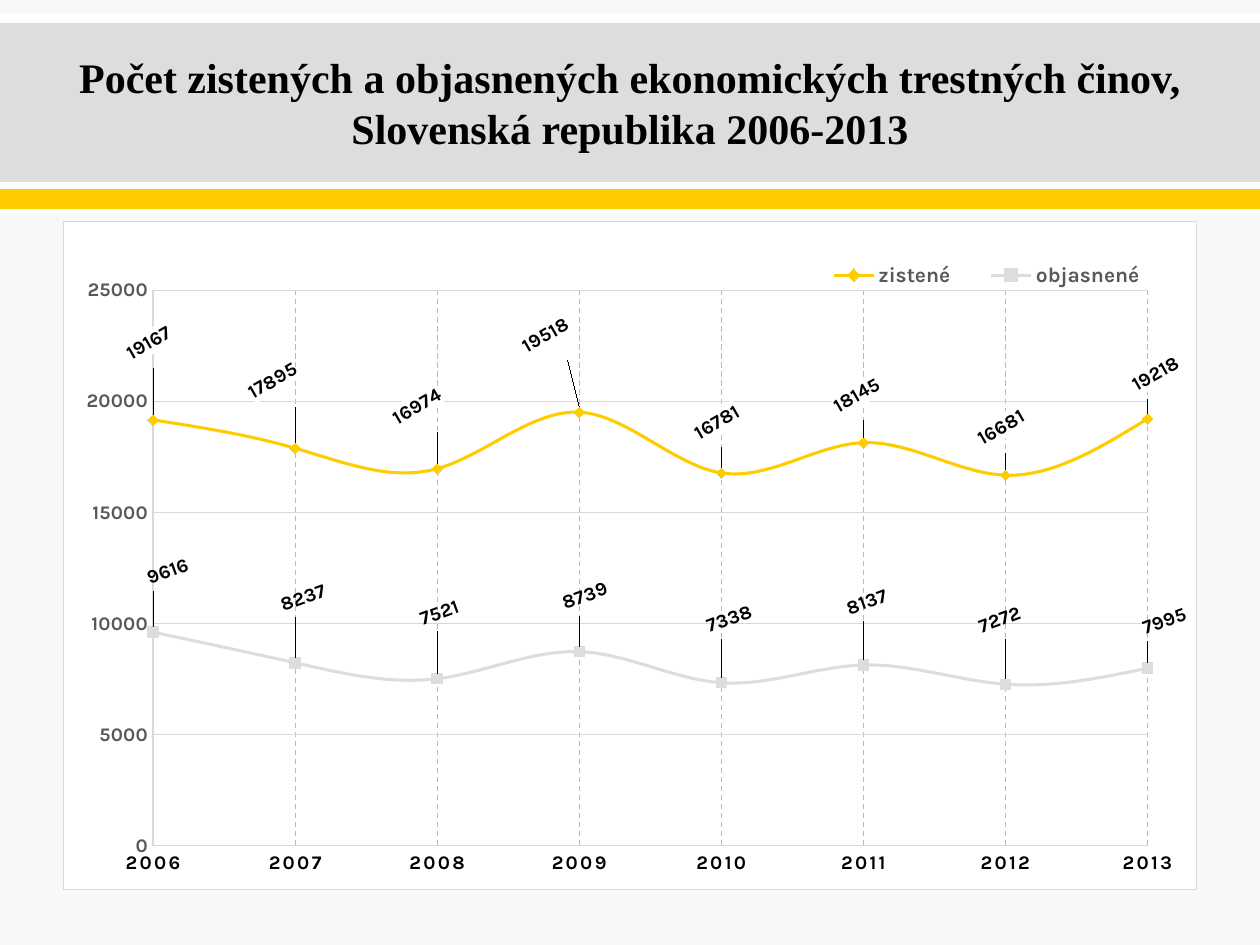
from dataclasses import dataclass

from lxml.etree import SubElement
from pptx import Presentation
from pptx.chart.data import CategoryChartData
from pptx.dml.color import RGBColor
from pptx.enum.chart import XL_CHART_TYPE as ChartType
from pptx.enum.chart import XL_LABEL_POSITION as LabelPosition
from pptx.enum.chart import XL_LEGEND_POSITION as LegendPosition
from pptx.enum.chart import XL_MARKER_STYLE as MarkerStyle
from pptx.enum.chart import XL_TICK_MARK as TickMark
from pptx.enum.dml import MSO_LINE_DASH_STYLE as DashStyle
from pptx.enum.shapes import MSO_SHAPE as ShapeType
from pptx.enum.text import MSO_ANCHOR as Anchor
from pptx.enum.text import MSO_AUTO_SIZE as AutoSize
from pptx.enum.text import PP_ALIGN as Align
from pptx.oxml import parse_xml
from pptx.oxml.ns import nsdecls, qn
from pptx.util import Emu, Pt

PX = 914400 // 126
BACKGROUND = RGBColor(0xF8, 0xF8, 0xF8)
WHITE = RGBColor(0xFF, 0xFF, 0xFF)
BLACK = RGBColor(0, 0, 0)
SILVER = RGBColor(0xDD, 0xDD, 0xDD)
YELLOW = RGBColor(0xFF, 0xCC, 0)
GRAY = RGBColor(0x59, 0x59, 0x59)
RULE = RGBColor(0xD9, 0xD9, 0xD9)
DASH = RGBColor(0xBA, 0xBA, 0xBA)
CHART_FONT = "Karla"
CHART_WIDTH, CHART_HEIGHT = 1134, 669


@dataclass
class Band:
    top: int
    height: int
    color: RGBColor


@dataclass
class CrimeSeries:
    name: str
    values: tuple
    color: RGBColor
    marker: MarkerStyle
    label_angle: int
    label_shifts: tuple  # px from the usual place above each point
    label_fill: bool


BANDS = (Band(14, 200, WHITE), Band(23, 159, SILVER), Band(189, 20, YELLOW))
YEARS = [str(year) for year in range(2006, 2014)]
SERIES = (
    CrimeSeries(
        "zistené", (19167, 17895, 16974, 19518, 16781, 18145, 16681, 19218),
        YELLOW, MarkerStyle.DIAMOND, -30,
        ((-4, -45), (-23, -34), (-20, -29), (-34, -44),
         (-4, -18), (-7, -15), (-5, -15), (8, -12)), True),
    CrimeSeries(
        "objasnené", (9616, 8237, 7521, 8739, 7338, 8137, 7272, 7995),
        SILVER, MarkerStyle.SQUARE, -20,
        ((15, -32), (8, -36), (2, -38), (6, -27),
         (8, -35), (3, -35), (-6, -36), (17, -18)), False),
)


def px(length: int) -> Emu:
    return Emu(length * PX)


def style_font(font, size: int, color: RGBColor, name: str = CHART_FONT) -> None:
    font.size, font.bold, font.name = Pt(size), True, name
    font.color.rgb = color


def style_line(line, color: RGBColor, width: float = 0.75) -> None:
    line.color.rgb = color
    line.width = Pt(width)


def set_layout(parent, index: int, **values) -> None:
    """Give a chart part a manual layout, as child number index."""
    for old in parent.findall(qn("c:layout")):
        parent.remove(old)
    layout = parse_xml(f"<c:layout {nsdecls('c')}><c:manualLayout/></c:layout>")
    for tag, value in values.items():
        SubElement(layout[0], qn(f"c:{tag}")).set("val", str(value))
    parent.insert(index, layout)


def fill_properties(color: RGBColor, border: str = ""):
    return parse_xml(
        f'<c:spPr {nsdecls("c", "a")}><a:solidFill><a:srgbClr val="{color}"/>'
        f"</a:solidFill>{border}</c:spPr>")


def add_band(slide, band: Band, width: Emu) -> None:
    shape = slide.shapes.add_shape(
        ShapeType.RECTANGLE, 0, px(band.top), width, px(band.height))
    shape.shadow.inherit = False
    shape.fill.solid()
    shape.fill.fore_color.rgb = band.color
    shape.line.fill.background()


def format_title(slide) -> None:
    title = slide.shapes.title
    title.left, title.top, title.width, title.height = map(px, (63, 25, 1134, 154))
    frame = title.text_frame
    frame.text = ("Počet zistených a objasnených ekonomických trestných činov,\v"
                  "Slovenská republika 2006-2013")
    frame.auto_size, frame.vertical_anchor = AutoSize.NONE, Anchor.MIDDLE
    paragraph = frame.paragraphs[0]
    paragraph.alignment = Align.CENTER
    for run in paragraph.runs:
        style_font(run.font, 24, BLACK, "Times New Roman")
    slide.shapes.element.append(title.element)  # in front of the bands


def format_series(series, crime: CrimeSeries) -> None:
    series.smooth = True
    style_line(series.format.line, crime.color, 1.75)
    series.marker.style, series.marker.size = crime.marker, 6
    series.marker.format.fill.solid()
    series.marker.format.fill.fore_color.rgb = crime.color
    style_line(series.marker.format.line, crime.color)
    labels = series.data_labels
    labels.show_value = True
    style_font(labels.font, 11, BLACK)
    for index in range(len(YEARS)):
        label = series.points[index].data_label
        style_font(label.font, 11, BLACK)
        label.position = LabelPosition.ABOVE
    # Tilt and shift each label
    elements = series._element.findall(f"{qn('c:dLbls')}/{qn('c:dLbl')}")
    for element, (shift_x, shift_y) in zip(elements, crime.label_shifts):
        text = element.find(qn("c:txPr"))
        text.find(qn("a:bodyPr")).set("rot", str(crime.label_angle * 60000))
        if crime.label_fill:
            for old in element.findall(qn("c:spPr")):
                element.remove(old)
            text.addprevious(fill_properties(WHITE))
        set_layout(element, 1, x=round(shift_x / CHART_WIDTH, 3),
                   y=round(shift_y / CHART_HEIGHT, 3))


def format_axes(chart) -> None:
    years, counts = chart.category_axis, chart.value_axis
    for axis, color, grid in ((years, BLACK, DASH), (counts, GRAY, RULE)):
        axis.major_tick_mark = axis.minor_tick_mark = TickMark.NONE
        axis.has_major_gridlines = True
        style_font(axis.tick_labels.font, 11, color)
        style_line(axis.format.line, RULE)
        style_line(axis.major_gridlines.format.line, grid)
    years.major_gridlines.format.line.dash_style = DashStyle.DASH
    # Wide letter spacing for the years
    next(years._element.iter(qn("a:defRPr"))).set("spc", "120")
    counts.minimum_scale, counts.maximum_scale, counts.major_unit = 0, 25000, 5000
    # First and last year lie on the plot edges
    for old in counts._element.findall(qn("c:crossBetween")):
        counts._element.remove(old)
    counts._element.find(qn("c:majorUnit")).addprevious(
        parse_xml(f'<c:crossBetween {nsdecls("c")} val="midCat"/>'))


def add_crime_chart(slide) -> None:
    data = CategoryChartData()
    data.categories = YEARS
    for crime in SERIES:
        data.add_series(crime.name, crime.values)
    chart = slide.shapes.add_chart(
        ChartType.LINE_MARKERS, px(63), px(221),
        px(CHART_WIDTH), px(CHART_HEIGHT), data).chart
    chart.has_title = False
    style_font(chart.font, 11, BLACK)
    chart.plots[0].vary_by_categories = False
    for series, crime in zip(chart.plots[0].series, SERIES):
        format_series(series, crime)
    format_axes(chart)

    # Legend at the upper right
    chart.has_legend = True
    legend = chart.legend
    legend.position, legend.include_in_layout = LegendPosition.TOP, False
    style_font(legend.font, 12, GRAY)
    set_layout(legend._element, 1, xMode="edge", yMode="edge",
               x=0.65, y=0.05, w=0.33, h=0.06)

    # Plot position, chart fill and border
    root = chart._chartSpace.find(qn("c:chart"))
    set_layout(root.find(qn("c:plotArea")), 0, layoutTarget="inner",
               xMode="edge", yMode="edge", x=0.079, y=0.103, w=0.878, h=0.832)
    border = (f'<a:ln w="{Pt(0.75)}"><a:solidFill><a:srgbClr val="{RULE}"/>'
              "</a:solidFill></a:ln>")
    root.addnext(fill_properties(WHITE, border))


def main() -> None:
    presentation = Presentation()
    presentation.slide_width, presentation.slide_height = px(1260), px(945)
    slide = presentation.slides.add_slide(presentation.slide_layouts[5])
    slide.background.fill.solid()
    slide.background.fill.fore_color.rgb = BACKGROUND
    for band in BANDS:
        add_band(slide, band, presentation.slide_width)
    format_title(slide)
    add_crime_chart(slide)
    presentation.save("out.pptx")


if __name__ == "__main__":
    main()
